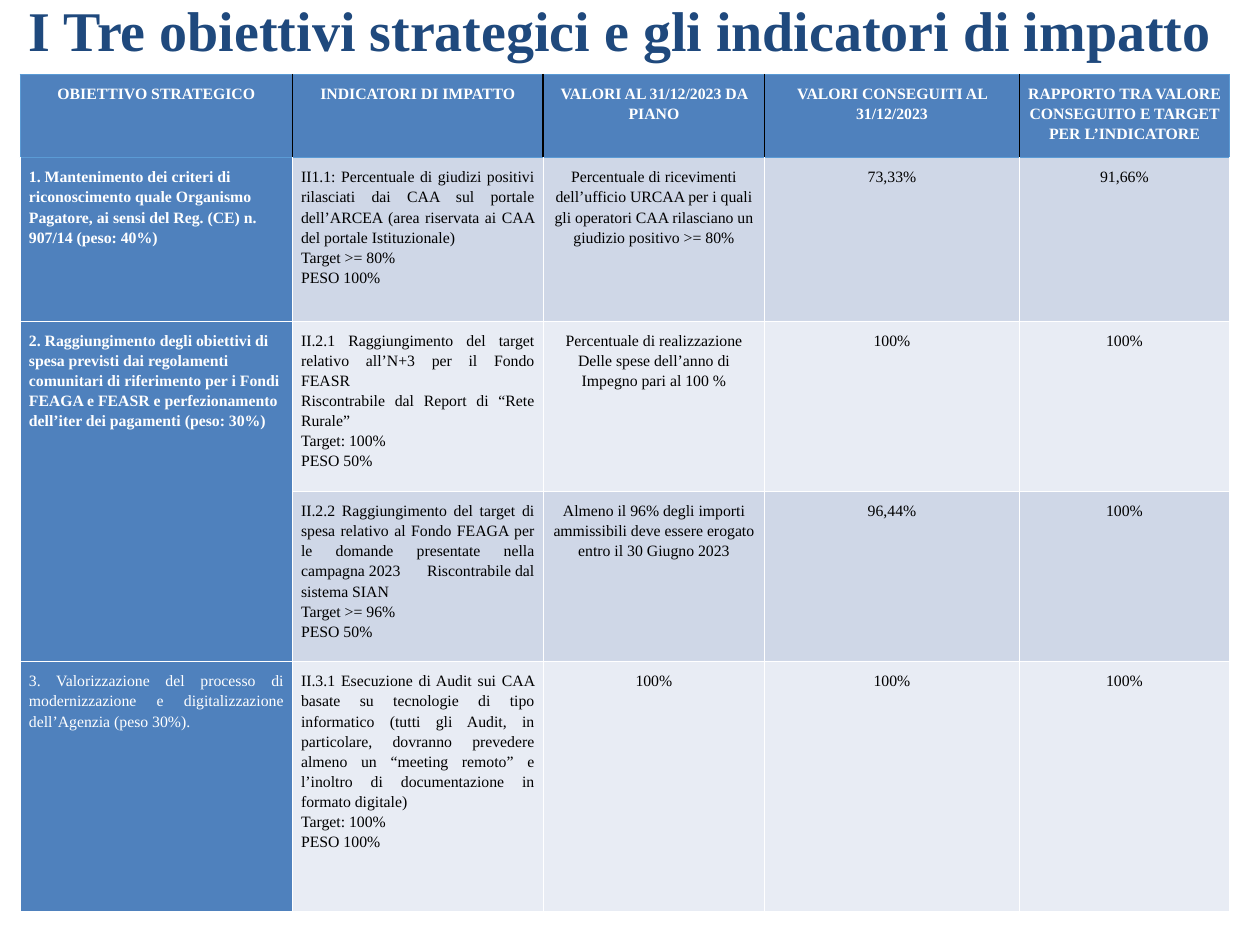
from lxml.etree import SubElement
from pptx import Presentation
from pptx.dml.color import RGBColor
from pptx.enum.text import MSO_ANCHOR, MSO_AUTO_SIZE, PP_ALIGN
from pptx.oxml.ns import qn
from pptx.util import Inches, Pt

FONT = "Times New Roman"
BLUE, SKY, WHITE, BLACK, NAVY = "4F81BD", "5B9BD5", "FFFFFF", "000000", "1F497D"
BANDS = ["CFD7E7", "E8ECF4"]
COLUMN_WIDTHS = [2.16, 1.99, 1.76, 2.02, 1.67]
ROW_HEIGHTS = [0.66, 1.3, 1.35, 1.35, 1.98]

HEADERS = [
    "OBIETTIVO STRATEGICO",
    "INDICATORI DI IMPATTO",
    "VALORI AL 31/12/2023 DA PIANO",
    "VALORI CONSEGUITI AL 31/12/2023",
    "RAPPORTO TRA VALORE CONSEGUITO E TARGET PER L’INDICATORE",
]
ROWS = [
    ["1. Mantenimento dei criteri di riconoscimento quale Organismo Pagatore, "
     "ai sensi del Reg. (CE) n. 907/14 (peso: 40%)",
     "II1.1: Percentuale di giudizi positivi rilasciati dai CAA sul portale "
     "dell’ARCEA (area riservata ai CAA del portale Istituzionale)\n"
     "Target >= 80%\nPESO 100%",
     "Percentuale di ricevimenti dell’ufficio URCAA per i quali gli operatori "
     "CAA rilasciano un giudizio positivo >= 80%",
     "73,33%", "91,66%"],
    ["2. Raggiungimento degli obiettivi di spesa previsti dai regolamenti "
     "comunitari di riferimento per i Fondi FEAGA e FEASR e perfezionamento "
     "dell’iter dei pagamenti (peso: 30%)",
     "II.2.1 Raggiungimento del target relativo all’N+3 per il Fondo FEASR\n"
     "Riscontrabile dal Report di “Rete Rurale”\nTarget: 100%\nPESO 50%",
     "Percentuale di realizzazione Delle spese dell’anno di Impegno pari al 100 %",
     "100%", "100%"],
    ["",
     "II.2.2 Raggiungimento del target di spesa relativo al Fondo FEAGA per le "
     "domande presentate nella campagna 2023 \tRiscontrabile dal sistema SIAN\n"
     "Target >= 96%\nPESO 50%",
     "Almeno il 96% degli importi ammissibili deve essere erogato entro il "
     "30 Giugno 2023",
     "96,44%", "100%"],
    ["3. Valorizzazione del processo di modernizzazione e digitalizzazione "
     "dell’Agenzia (peso 30%).",
     "II.3.1 Esecuzione di Audit sui CAA basate su tecnologie di tipo informatico "
     "(tutti gli Audit, in particolare, dovranno prevedere almeno un “meeting "
     "remoto” e l’inoltro di documentazione in formato digitale)\n"
     "Target: 100%\nPESO 100%",
     "100%", "100%", "100%"],
]


def rgb(value):
    """Turn a hex string into a colour."""
    return RGBColor.from_string(value)


def format_font(font, size, color, bold):
    """Apply the slide's typeface with a size, colour and weight."""
    font.name, font.size, font.bold = FONT, Pt(size), bold
    font.color.rgb = rgb(color)


def set_borders(cell, borders):
    """Draw the cell's left, right, top and bottom borders."""
    properties = cell._tc.get_or_add_tcPr()
    for position, side in enumerate("LRTB"):
        color, width = borders[side]
        line = properties.makeelement(qn(f"a:ln{side}"), {"w": str(Pt(width))})
        fill = SubElement(line, qn("a:solidFill"))
        SubElement(fill, qn("a:srgbClr"), val=color)
        properties.insert(position, line)


def cell_borders(row, column):
    """Return the border colour and width of each side of a cell."""
    if row == 0:
        last = len(COLUMN_WIDTHS) - 1
        outer, inner = (SKY, 0.5), (BLACK, 0.75)
        return {"L": inner if column else outer,
                "R": inner if column < last else outer,
                "T": outer, "B": outer}
    borders = dict.fromkeys("LRTB", (WHITE, 0.5))
    if row == 1:
        borders["T"] = (SKY, 0.5)
    return borders


def cell_alignment(row, column):
    """Return the text alignment that belongs to a cell's row and column."""
    if row == 0 or column > 1:
        return PP_ALIGN.CENTER
    if column == 1 or row == len(ROWS):
        return PP_ALIGN.JUSTIFY
    return PP_ALIGN.LEFT


def fill_cell(cell, text, row, column):
    """Write and format one table cell."""
    heading = row == 0 or column == 0
    cell.fill.solid()
    cell.fill.fore_color.rgb = rgb(BLUE if heading else BANDS[(row - 1) % 2])
    cell.margin_left = cell.margin_right = Inches(0.07)
    cell.margin_top = cell.margin_bottom = Inches(0.07)
    set_borders(cell, cell_borders(row, column))
    cell.text_frame.text = text
    for paragraph in cell.text_frame.paragraphs:
        paragraph.alignment = cell_alignment(row, column)
        paragraph.line_spacing = 1.15
        if paragraph.alignment == PP_ALIGN.LEFT:
            paragraph.space_after = Pt(6)
        bold = heading and row < len(ROWS)
        format_font(paragraph.font, 9, WHITE if heading else BLACK, bold)
        for run in paragraph.runs:
            format_font(run.font, 9, WHITE if heading else BLACK, bold)


def add_title(slide, left, top, width, height):
    """Place the title placeholder in the given box."""
    title = slide.shapes.title
    title.left, title.top = Inches(left), Inches(top)
    title.width, title.height = Inches(width), Inches(height)
    frame = title.text_frame
    frame.text = "I Tre obiettivi strategici e gli indicatori di impatto"
    frame.word_wrap = True
    frame.auto_size = MSO_AUTO_SIZE.SHAPE_TO_FIT_TEXT
    frame.vertical_anchor = MSO_ANCHOR.BOTTOM
    paragraph = frame.paragraphs[0]
    paragraph.alignment = PP_ALIGN.LEFT
    format_font(paragraph.runs[0].font, 32, NAVY, True)


def add_objectives_table(slide, left, top):
    """Place the table of objectives and indicators at the given corner."""
    table = slide.shapes.add_table(
        len(ROW_HEIGHTS), len(COLUMN_WIDTHS), Inches(left), Inches(top),
        Inches(sum(COLUMN_WIDTHS)), Inches(sum(ROW_HEIGHTS))).table
    for column, width in zip(table.columns, COLUMN_WIDTHS):
        column.width = Inches(width)
    for row, height in zip(table.rows, ROW_HEIGHTS):
        row.height = Inches(height)
    for row, texts in enumerate([HEADERS] + ROWS):
        for column, text in enumerate(texts):
            fill_cell(table.cell(row, column), text, row, column)
    table.cell(2, 0).merge(table.cell(3, 0))


def main():
    """Build and save the presentation."""
    presentation = Presentation()
    presentation.slide_width, presentation.slide_height = Inches(10), Inches(7.5)
    slide = presentation.slides.add_slide(presentation.slide_layouts[5])
    add_title(slide, 0.13, -0.09, 9.68, 0.64)
    add_objectives_table(slide, 0.16, 0.59)
    presentation.save("out.pptx")


if __name__ == "__main__":
    main()
